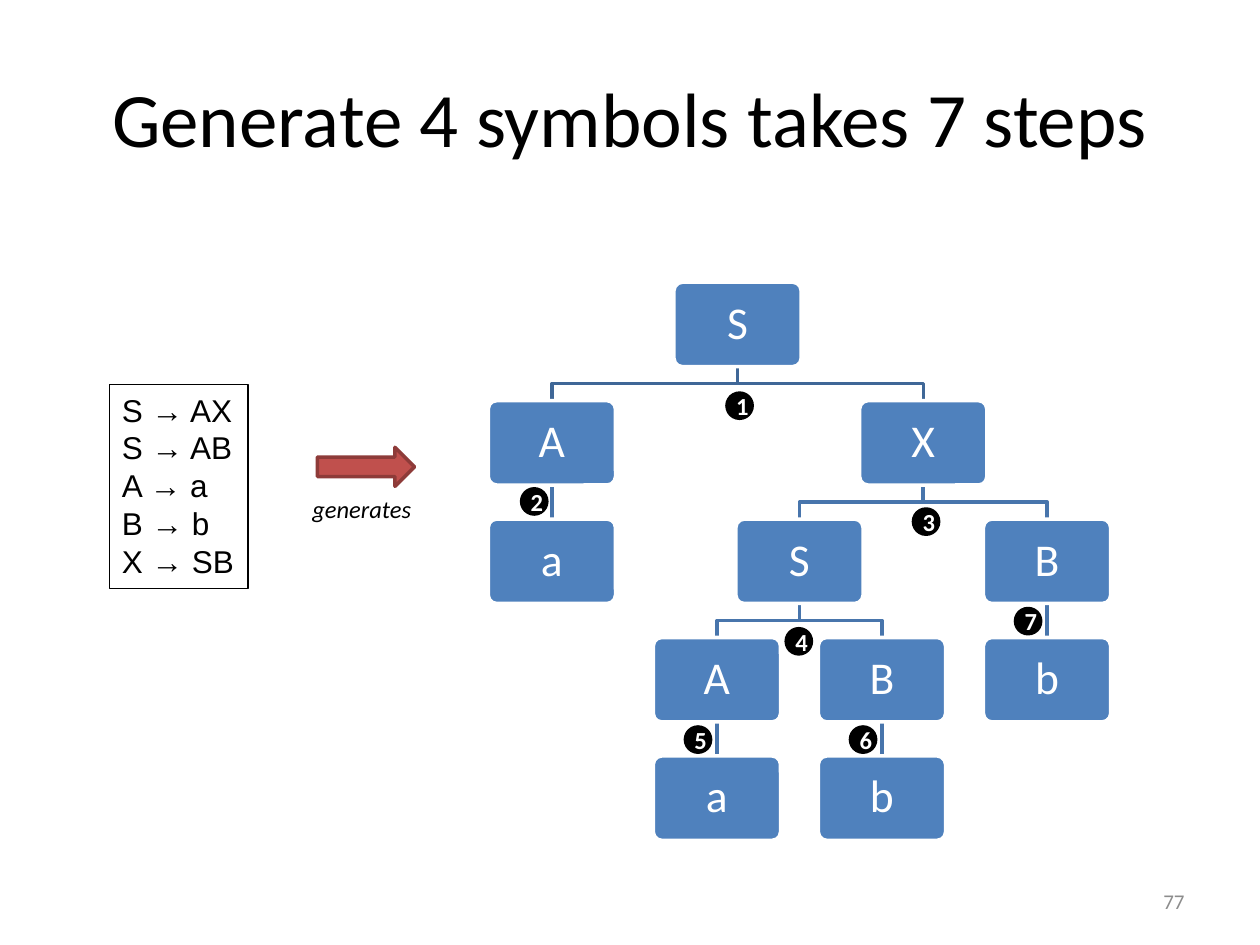
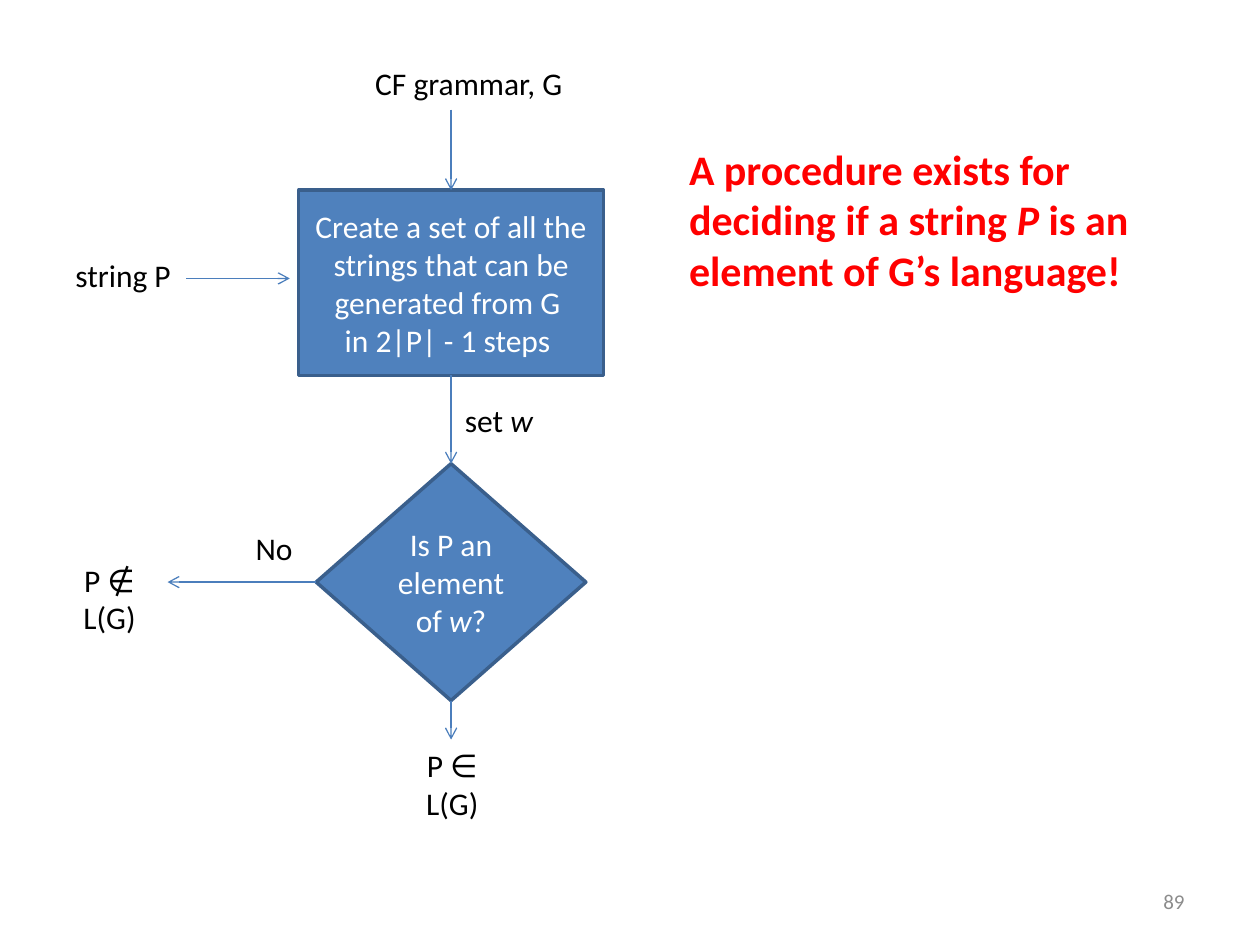
from dataclasses import dataclass

from pptx import Presentation
from pptx.dml.color import RGBColor
from pptx.enum.shapes import MSO_CONNECTOR, MSO_SHAPE
from pptx.enum.text import MSO_ANCHOR, PP_ALIGN
from pptx.oxml.ns import qn
from pptx.oxml.xmlchemy import OxmlElement
from pptx.util import Inches, Pt

LEFT, CENTER, RIGHT = PP_ALIGN.LEFT, PP_ALIGN.CENTER, PP_ALIGN.RIGHT
TOP, MIDDLE = MSO_ANCHOR.TOP, MSO_ANCHOR.MIDDLE
RECT, ROUND = MSO_SHAPE.RECTANGLE, MSO_SHAPE.ROUNDED_RECTANGLE
OVAL, ARROW = MSO_SHAPE.OVAL, MSO_SHAPE.RIGHT_ARROW
CHOICE = MSO_SHAPE.FLOWCHART_DECISION
STRAIGHT = MSO_CONNECTOR.STRAIGHT


@dataclass(frozen=True)
class Theme:
    """Colours, fonts and type sizes of the deck."""
    black: str = "000000"
    white: str = "FFFFFF"
    gray: str = "8C8C8C"
    blue: str = "4F81BD"
    edge: str = "3A5F8C"
    flow: str = "4B7EBC"
    root: str = "3F6797"
    branch: str = "4875AC"
    red: str = "C0504D"
    maroon: str = "8E3B39"
    alert: str = "FF0000"
    font: str = "Calibri"
    plain: str = "Arial"
    title: int = 44
    node: int = 26
    claim: int = 24
    body: int = 18
    small: int = 14
    foot: int = 12
    thick: float = 2
    thin: float = 0.75


THEME = Theme()
NODE_W, NODE_H, GAP = 1.01, 0.67, 0.27
ROOT_Y, LEAF_X, LEAF_STEP = 2.24, 4.38, 1.31
TREE = ("S", [("A", [("a", [])]),
              ("X", [("S", [("A", [("a", [])]), ("B", [("b", [])])]),
                     ("B", [("b", [])])])])
STEPS = [(5.77, 3.12), (4.14, 3.88), (7.25, 4.04), (6.24, 4.99),
         (5.44, 5.77), (6.75, 5.77), (8.06, 4.83)]
RULES = "S → AX\nS → AB\nA → a\nB → b\nX → SB"


def write(shape, text, size=THEME.body, color=THEME.black, font=THEME.font,
          bold=False, italic=False, align=LEFT, anchor=TOP, wrap=True,
          inset=None, spacing=None):
    """Fill a shape with text, where asterisks enclose italics."""
    frame = shape.text_frame
    frame.word_wrap = wrap
    frame.vertical_anchor = anchor
    if inset is not None:
        frame.margin_left = frame.margin_right = Inches(inset)
        frame.margin_top = frame.margin_bottom = Inches(inset)
    for row, line in enumerate(text.split("\n")):
        para = frame.add_paragraph() if row else frame.paragraphs[0]
        para.alignment = align
        para.line_spacing = spacing
        for index, piece in enumerate(line.split("*")):
            run = para.add_run()
            run.text = piece
            run.font.name = font
            run.font.size = Pt(size)
            run.font.bold = bold
            run.font.italic = italic or index % 2 == 1
            run.font.color.rgb = RGBColor.from_string(color)


def label(slide, text, box, **style):
    """Add a text box."""
    write(slide.shapes.add_textbox(*map(Inches, box)), text, **style)


def stroke(shape, color, width):
    """Set the outline of a shape or connector."""
    shape.line.color.rgb = RGBColor.from_string(color)
    shape.line.width = Pt(width)


def block(slide, kind, box, fill, edge, width=THEME.thick):
    """Add a flat preset shape, unfilled if fill is None."""
    shape = slide.shapes.add_shape(kind, *map(Inches, box))
    shape.shadow.inherit = False
    if fill:
        shape.fill.solid()
        shape.fill.fore_color.rgb = RGBColor.from_string(fill)
    else:
        shape.fill.background()
    stroke(shape, edge, width)
    return shape


def link(slide, start, end, color=THEME.flow, width=THEME.thin,
         head=True, begin=None, finish=None):
    """Add a straight connector, joined to (shape, side) pairs if given."""
    line = slide.shapes.add_connector(STRAIGHT, *map(Inches, start + end))
    stroke(line, color, width)
    if head:
        tip = OxmlElement("a:tailEnd")
        tip.set("type", "arrow")
        line.element.spPr.find(qn("a:ln")).append(tip)
    line.element.spPr.append(OxmlElement("a:effectLst"))
    if begin:
        line.begin_connect(*begin)
    if finish:
        line.end_connect(*finish)
    return line


def elbow(slide, start, end, color):
    """Add a stepped line that turns halfway down."""
    (left, top), (right, low) = start, end
    mid = (top + low) / 2
    points = [(left, mid), (right, mid), end]
    pen = slide.shapes.build_freeform(Inches(left), Inches(top))
    pen.add_line_segments([tuple(map(Inches, p)) for p in points], close=False)
    line = pen.convert_to_shape()
    line.shadow.inherit = False
    line.fill.background()
    stroke(line, color, THEME.thick)
    return line


def grow(slide, tree, leaves, level=0):
    """Draw a tree with parents centred over children; return box and centre."""
    name, kids = tree
    grown = [grow(slide, kid, leaves, level + 1) for kid in kids]
    if grown:
        mid = (grown[0][1] + grown[-1][1]) / 2
    else:
        mid = LEAF_X + LEAF_STEP * next(leaves)
    top = ROOT_Y + level * (NODE_H + GAP)
    box = block(slide, ROUND, (mid - NODE_W / 2, top, NODE_W, NODE_H),
                THEME.blue, THEME.white)
    box.adjustments[0] = 0.1
    write(box, name, size=THEME.node, color=THEME.white, align=CENTER,
          anchor=MIDDLE, inset=0.13, spacing=0.9)
    color = THEME.branch if level else THEME.root
    for kid, spot in grown:
        start, end = (mid, top + NODE_H), (spot, top + NODE_H + GAP)
        if len(grown) == 1:
            line = link(slide, start, end, color, THEME.thick, head=False,
                        begin=(box, 2), finish=(kid, 0))
        else:
            line = elbow(slide, start, end, color)
        line.element.getparent().insert(2, line.element)
    return box, mid


def page(deck, number):
    """Add a blank slide with its page number."""
    slide = deck.slides.add_slide(deck.slide_layouts[6])
    label(slide, str(number), (7.17, 6.95, 2.33, 0.4), size=THEME.foot,
          color=THEME.gray, align=RIGHT, anchor=MIDDLE)
    return slide


def steps(deck):
    """Build the slide that counts the steps of a derivation."""
    slide = page(deck, 77)
    label(slide, "Generate 4 symbols takes 7 steps", (0.5, 0.3, 9, 1.25),
          size=THEME.title, align=CENTER, anchor=MIDDLE)
    grow(slide, TREE, iter(range(4)))
    block(slide, ARROW, (2.52, 3.55, 0.77, 0.31), THEME.red, THEME.maroon)
    label(slide, "generates", (2.38, 3.87, 0.99, 0.34), size=THEME.small,
          italic=True, wrap=False)
    rules = block(slide, RECT, (0.87, 3.05, 1.1, 1.62), None, THEME.black,
                  THEME.thin)
    write(rules, RULES, font=THEME.plain, wrap=False)
    for count, spot in enumerate(STEPS, 1):
        dot = block(slide, OVAL, spot + (0.2, 0.2), THEME.black, THEME.black)
        write(dot, str(count), size=THEME.small, color=THEME.white, bold=True,
              align=CENTER, anchor=MIDDLE)


def decide(deck):
    """Build the flow chart of the membership test."""
    slide = page(deck, 89)
    mid = 3.58
    inner = dict(color=THEME.white, align=CENTER, anchor=MIDDLE)
    create = block(slide, RECT, (2.37, 1.51, 2.42, 1.47), THEME.blue, THEME.edge)
    write(create, "Create a set of all the strings that can be generated "
          "from G \nin 2|P| - 1 steps ", **inner)
    test = block(slide, CHOICE, (2.51, 3.68, 2.14, 1.88), THEME.blue, THEME.edge)
    write(test, "Is P an element of *w*?", **inner)

    link(slide, (mid, 0.87), (mid, 1.51), finish=(create, 0))
    link(slide, (mid, 2.98), (mid, 3.68), begin=(create, 2), finish=(test, 0))
    link(slide, (2.51, 4.62), (1.33, 4.62), begin=(test, 1))
    link(slide, (mid, 5.56), (mid, 5.87), begin=(test, 2))
    link(slide, (1.48, 2.21), (2.3, 2.21))

    for text, left, top, width in [("CF grammar, G", 2.88, 0.46, 1.7),
                                   ("string P", 0.5, 1.98, 0.97),
                                   ("set *w*", 3.59, 3.13, 0.75),
                                   ("No", 1.93, 4.15, 0.5)]:
        label(slide, text, (left, top, width, 0.4), wrap=False)
    for text, left, top in [("P ∉ L(G)", 0.37, 4.4), ("P ∈ L(G)", 3.09, 5.87)]:
        label(slide, text, (left, top, 1, 0.4), align=CENTER)
    label(slide, "A procedure exists for deciding if a string *P* is an "
          "element of G’s language!", (5.37, 1.09, 3.95, 1.31),
          size=THEME.claim, color=THEME.alert, bold=True)


def main():
    """Build and save the deck."""
    deck = Presentation()
    deck.slide_width, deck.slide_height = Inches(10), Inches(7.5)
    steps(deck)
    decide(deck)
    deck.save("out.pptx")


if __name__ == "__main__":
    main()
